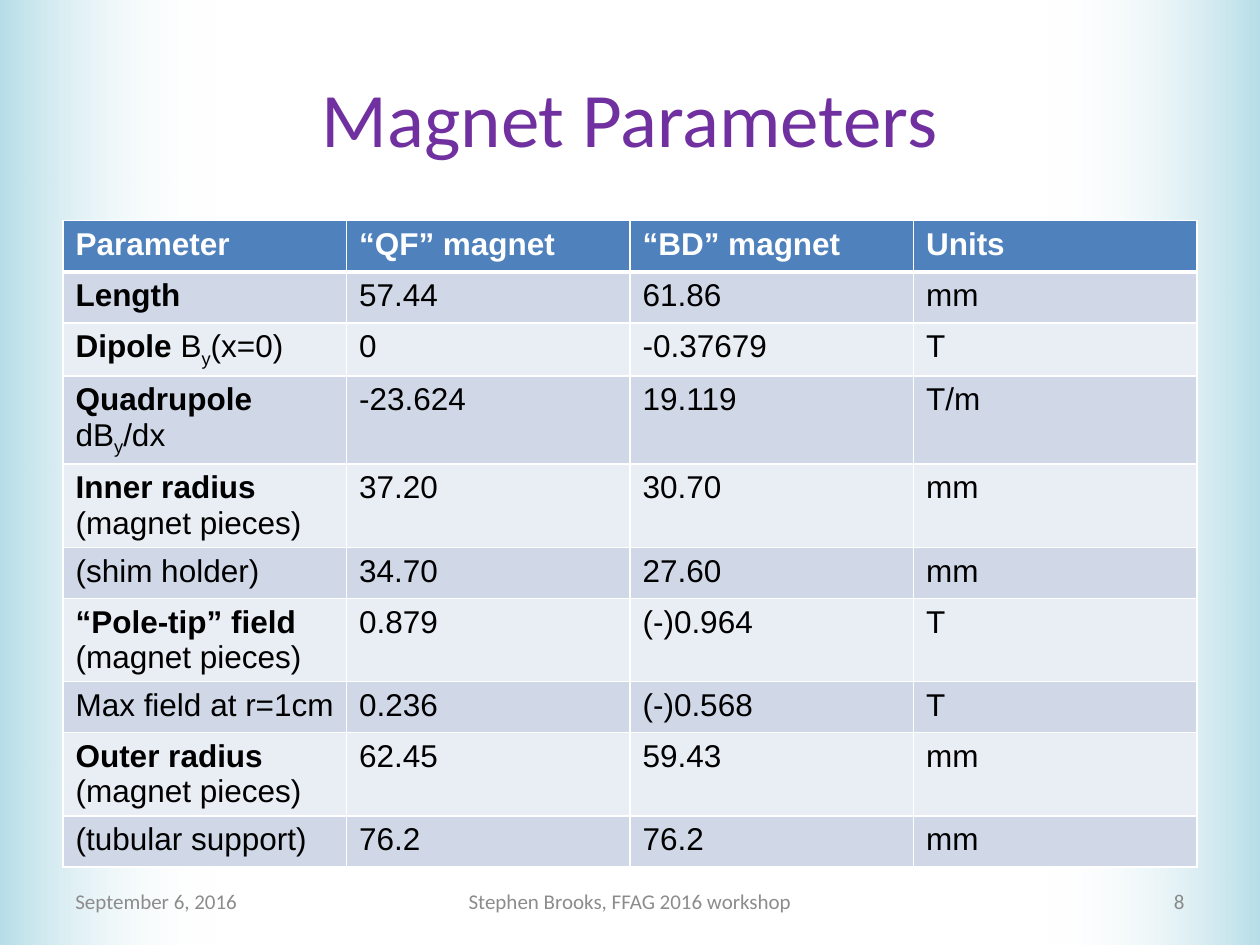
from typing import NamedTuple

from lxml.etree import SubElement as Sub
from pptx import Presentation
from pptx.dml.color import RGBColor as Rgb
from pptx.enum.shapes import MSO_SHAPE as Kind
from pptx.enum.text import MSO_ANCHOR as Anchor, PP_ALIGN as Align
from pptx.oxml.ns import qn
from pptx.util import Cm, Pt

WIDE, HIGH, EDGE = 25.4, 19.05, 1.27
BAND = 4.3
ROW = 1.03
WHITE, BLACK, GRAY = "FFFFFF", "000000", "8C8C8C"
HEAD, ODD, EVEN = "4F81BD", "D0D8E8", "E9EDF4"


class Label(NamedTuple):
    bold: str = ""
    plain: str = ""
    sub: str = ""
    tail: str = ""


class Row(NamedTuple):
    label: Label
    qf: str
    bd: str
    unit: str


class Note(NamedTuple):
    text: str
    left: float
    top: float
    width: float
    height: float
    align: Align
    size: float
    color: str


HEADS = ["Parameter", "“QF” magnet", "“BD” magnet", "Units"]
ROWS = [
    Row(Label("Length"), "57.44", "61.86", "mm"),
    Row(Label("Dipole", " B", "y", "(x=0)"), "0", "-0.37679", "T"),
    Row(Label("Quadrupole ", "dB", "y", "/dx"), "-23.624", "19.119", "T/m"),
    Row(Label("Inner radius ", "(magnet pieces)"), "37.20", "30.70", "mm"),
    Row(Label(plain="(shim holder)"), "34.70", "27.60", "mm"),
    Row(Label("“Pole-tip” field", " (magnet pieces)"), "0.879", "(-)0.964", "T"),
    Row(Label(plain="Max field at r=1cm"), "0.236", "(-)0.568", "T"),
    Row(Label("Outer radius ", "(magnet pieces)"), "62.45", "59.43", "mm"),
    Row(Label(plain="(tubular support)"), "76.2", "76.2", "mm"),
]
NOTES = [
    Note("Magnet Parameters", EDGE, 0.76, 22.86, 3.18, Align.CENTER, 44, "7030A0"),
    Note("September 6, 2016", EDGE, 17.65, 5.93, 1.02, Align.LEFT, 12, GRAY),
    Note("Stephen Brooks, FFAG 2016 workshop", 8.68, 17.65, 8.04, 1.02,
         Align.CENTER, 12, GRAY),
    Note("8", 18.2, 17.65, 5.93, 1.02, Align.RIGHT, 12, "898989"),
]


def paint(fill, color: str) -> None:
    fill.solid()
    fill.fore_color.rgb = Rgb.from_string(color)


def style(run, face: str, size: float, color: str, bold: bool = False) -> None:
    font = run.font
    font.name, font.size, font.bold = face, Pt(size), bold
    paint(font.fill, color)


def add_band(slide, left: float, turn: int) -> None:
    """Draw a side band that fades towards the middle of the slide."""
    band = slide.shapes.add_shape(Kind.RECTANGLE, Cm(left), 0, Cm(BAND), Cm(HIGH))
    band.rotation = turn
    band.shadow.inherit = False
    band.line.fill.background()
    band.fill.gradient()
    band.fill.gradient_angle = 0
    for stop, color, place in zip(band.fill.gradient_stops, ("B7DEE8", WHITE), (0, 1)):
        stop.color.rgb = Rgb.from_string(color)
        stop.position = place
    last = band.fill._fill._gradFill.findall(".//" + qn("a:srgbClr"))[-1]
    Sub(last, qn("a:alpha"), val="0")


def add_note(slide, note: Note) -> None:
    box = slide.shapes.add_textbox(
        Cm(note.left), Cm(note.top), Cm(note.width), Cm(note.height))
    frame = box.text_frame
    frame.word_wrap = True
    frame.vertical_anchor = Anchor.MIDDLE
    frame.text = note.text
    line = frame.paragraphs[0]
    line.alignment = note.align
    style(line.runs[0], "Calibri", note.size, note.color)


def finish(cell, color: str, top: float = 1, base: float = 1) -> None:
    """Give a cell its white borders and its fill."""
    props = cell._tc.get_or_add_tcPr()
    for side, width in zip("LRTB", (1, 1, top, base)):
        edge = Sub(props, qn(f"a:ln{side}"), w=str(Pt(width)))
        Sub(Sub(edge, qn("a:solidFill")), qn("a:srgbClr"), val=WHITE)
    paint(cell.fill, color)


def write(cell, text: str, color: str = BLACK, bold: bool = False) -> None:
    cell.text_frame.text = text
    style(cell.text_frame.paragraphs[0].runs[0], "Arial", 18, color, bold)


def write_label(cell, label: Label) -> None:
    line = cell.text_frame.paragraphs[0]
    for part, text in zip(label._fields, label):
        if text:
            run = line.add_run()
            run.text = text
            style(run, "Arial", 18, BLACK, part == "bold")
            if part == "sub":
                run.font._element.set("baseline", "-25000")


def add_grid(slide) -> None:
    count = len(ROWS) + 1
    grid = slide.shapes.add_table(
        count, len(HEADS), Cm(EDGE), Cm(4.45), Cm(WIDE - 2 * EDGE), Cm(ROW * count)).table
    for col, text in enumerate(HEADS):
        cell = grid.cell(0, col)
        write(cell, text, WHITE, True)
        finish(cell, HEAD, base=3)
    for num, row in enumerate(ROWS, 1):
        write_label(grid.cell(num, 0), row.label)
        for col, text in enumerate(row[1:], 1):
            write(grid.cell(num, col), text)
        for cell in grid.rows[num].cells:
            finish(cell, ODD if num % 2 else EVEN, top=3 if num == 1 else 1)


def main() -> None:
    deck = Presentation()
    deck.slide_width, deck.slide_height = Cm(WIDE), Cm(HIGH)
    slide = deck.slides.add_slide(deck.slide_layouts[6])
    paint(slide.background.fill, WHITE)
    add_band(slide, WIDE - BAND, 180)
    add_band(slide, 0, 0)
    add_grid(slide)
    for note in NOTES:
        add_note(slide, note)
    deck.save("out.pptx")


if __name__ == "__main__":
    main()
